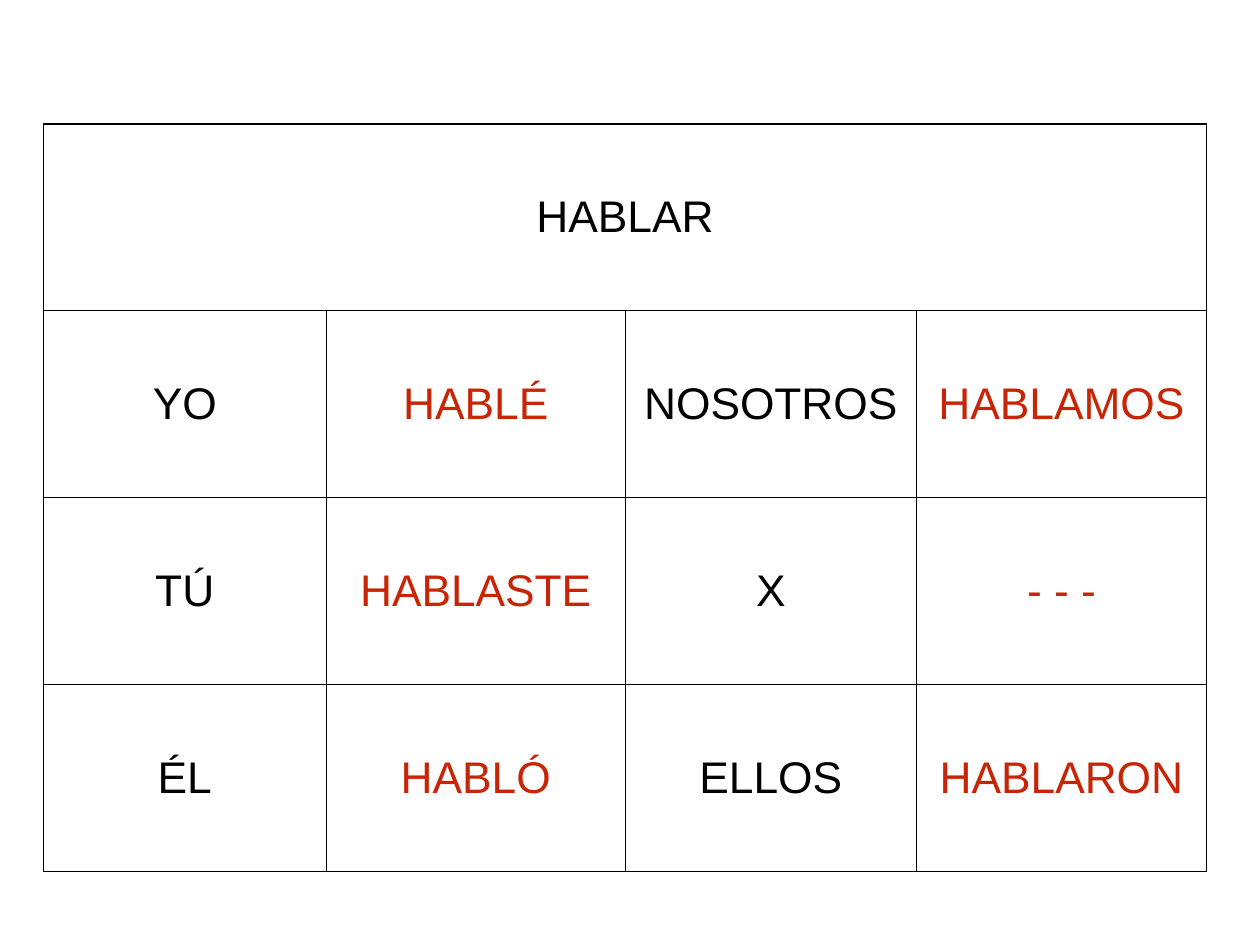
from lxml.etree import SubElement
from pptx import Presentation
from pptx.dml.color import RGBColor
from pptx.enum.text import MSO_ANCHOR, PP_ALIGN
from pptx.oxml.ns import qn
from pptx.util import Inches, Pt

BLACK = RGBColor(0x00, 0x00, 0x00)
RED = RGBColor(0xC8, 0x25, 0x06)

COLUMN_WIDTHS = [3.19, 3.38, 3.28, 3.28]
ROW_HEIGHT = 2.11
CONJUGATION = [
    ["HABLAR", "", "", ""],
    ["YO", "HABLÉ", "NOSOTROS", "HABLAMOS"],
    ["TÚ", "HABLASTE", "X", "- - -"],
    ["ÉL", "HABLÓ", "ELLOS", "HABLARON"],
]


def add_borders(cell):
    properties = cell._tc.get_or_add_tcPr()
    for side in ("a:lnL", "a:lnR", "a:lnT", "a:lnB"):
        line = SubElement(properties, qn(side), w=str(Pt(1)))
        fill = SubElement(line, qn("a:solidFill"))
        SubElement(fill, qn("a:srgbClr"), val=str(BLACK))


presentation = Presentation()
presentation.slide_width = Inches(14.22)
presentation.slide_height = Inches(10.67)
slide = presentation.slides.add_slide(presentation.slide_layouts[6])

# Table frame
row_count = len(CONJUGATION)
table = slide.shapes.add_table(
    row_count, len(COLUMN_WIDTHS), Inches(0.49), Inches(1.4),
    Inches(sum(COLUMN_WIDTHS)), Inches(ROW_HEIGHT * row_count)).table
table.first_row = False
table.horz_banding = False
for column, width in zip(table.columns, COLUMN_WIDTHS):
    column.width = Inches(width)
for row in table.rows:
    row.height = Inches(ROW_HEIGHT)

# Pronouns in black, verb forms in red
for row, words in zip(table.rows, CONJUGATION):
    for index, (cell, word) in enumerate(zip(row.cells, words)):
        add_borders(cell)
        cell.fill.background()
        cell.vertical_anchor = MSO_ANCHOR.MIDDLE
        cell.margin_left = cell.margin_right = Inches(0.06)
        cell.margin_top = cell.margin_bottom = Inches(0.06)
        paragraph = cell.text_frame.paragraphs[0]
        paragraph.text = word
        paragraph.alignment = PP_ALIGN.CENTER
        for run in paragraph.runs:
            run.font.name = "Arial"
            run.font.size = Pt(36)
            run.font.color.rgb = RED if index % 2 else BLACK

# Heading across all columns
table.cell(0, 0).merge(table.cell(0, len(COLUMN_WIDTHS) - 1))

presentation.save("out.pptx")
